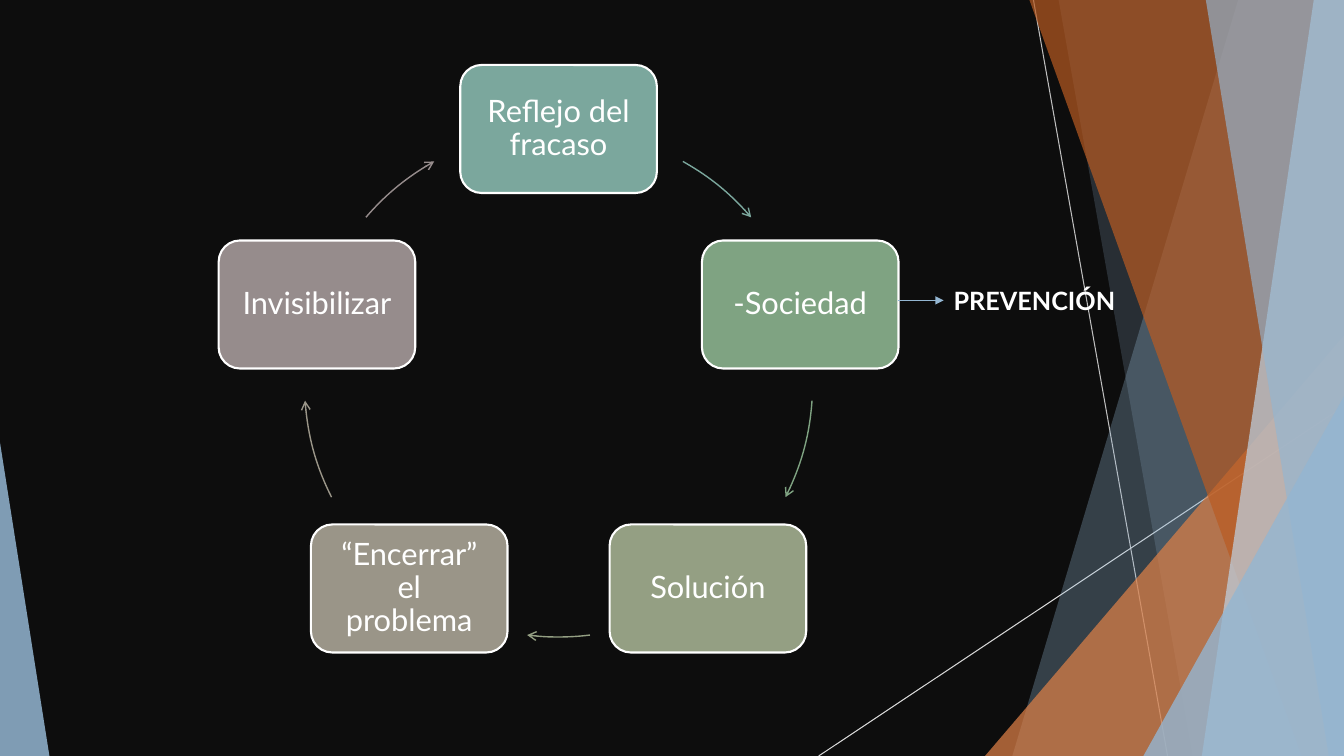
from lxml import etree
from pptx import Presentation
from pptx.dml.color import RGBColor
from pptx.enum.shapes import MSO_CONNECTOR, MSO_SHAPE
from pptx.enum.text import MSO_ANCHOR, MSO_AUTO_SIZE, PP_ALIGN
from pptx.oxml.ns import qn
from pptx.util import Inches, Pt
from math import cos, radians, sin

ARC, ROUNDED, TRIANGLE = MSO_SHAPE.ARC, MSO_SHAPE.ROUNDED_RECTANGLE, MSO_SHAPE.ISOSCELES_TRIANGLE
STRAIGHT = MSO_CONNECTOR.STRAIGHT
MIDDLE = MSO_ANCHOR.MIDDLE
CENTER, LEFT = PP_ALIGN.CENTER, PP_ALIGN.LEFT
GROW = MSO_AUTO_SIZE.SHAPE_TO_FIT_TEXT

BLACK = RGBColor(0x0D, 0x0D, 0x0D)
WHITE = RGBColor(0xFF, 0xFF, 0xFF)
BLUE = RGBColor(0x94, 0xB6, 0xD2)
PALE_BLUE = RGBColor(0xBF, 0xD3, 0xE4)
ORANGE = RGBColor(0xDD, 0x80, 0x47)
BROWN = RGBColor(0xB9, 0x5B, 0x22)
GREY = RGBColor(0xBF, 0xBF, 0xBF)
LIGHT_GREY = RGBColor(0xD9, 0xD9, 0xD9)
TEAL = RGBColor(0x7B, 0xA7, 0x9D)
GREEN = RGBColor(0x7F, 0xA3, 0x82)
OLIVE = RGBColor(0x94, 0x9F, 0x83)
TAUPE = RGBColor(0x9A, 0x95, 0x88)
MAUVE = RGBColor(0x96, 0x8C, 0x8C)

FONT = "Lato"
SLIDE_W, SLIDE_H = 13.33, 7.5
CYCLE_X, CYCLE_Y, RADIUS = 5.54, 3.8, 2.52
STEP_W, STEP_H = 1.95, 1.27

# Step label, colour, and start and end angle of the arrow that follows it
STEPS = [
    ("Reflejo del fracaso", TEAL, 299.3, 319.3),
    ("-Sociedad", GREEN, 4, 26.7),
    ("Solución", OLIVE, 82.9, 97.1),
    ("“Encerrar” el problema", TAUPE, 153.3, 176),
    ("Invisibilizar", MAUVE, 220.7, 240.7),
]


def write_text(shape, text, size, bold=False, align=LEFT, spacing=1.0):
    frame = shape.text_frame
    frame.word_wrap = True
    paragraph = frame.paragraphs[0]
    paragraph.alignment = align
    paragraph.line_spacing = spacing
    run = paragraph.add_run()
    run.text = text
    run.font.name = FONT
    run.font.size = Pt(size)
    run.font.bold = bold
    run.font.color.rgb = WHITE
    return frame


def set_line(shape, color, width, arrowhead=None):
    shape.line.color.rgb = color
    shape.line.width = Pt(width)
    if arrowhead:
        outline = shape._element.spPr.find(qn("a:ln"))
        etree.SubElement(outline, qn("a:tailEnd"), type=arrowhead)


def add_line(slide, start, end, color, width, arrowhead=None):
    line = slide.shapes.add_connector(STRAIGHT, *map(Inches, start + end))
    set_line(line, color, width, arrowhead)
    etree.SubElement(line._element.spPr, qn("a:effectLst"))
    return line


def fill_facet(facet, color, opacity):
    """Give a background facet a see-through fill; opacity is in percent."""
    facet.shadow.inherit = False
    facet.line.fill.background()
    facet.fill.solid()
    facet.fill.fore_color.rgb = color
    tint = facet._element.spPr.find(qn("a:solidFill"))[0]
    etree.SubElement(tint, qn("a:alpha"), val=str(opacity * 1000))


def add_band(slide, top_x, bottom_x, color, opacity):
    """Add a full-height facet from a slanted left edge to the slide's right side."""
    builder = slide.shapes.build_freeform(Inches(top_x), 0)
    corners = [(SLIDE_W, 0), (SLIDE_W, SLIDE_H), (bottom_x, SLIDE_H)]
    builder.add_line_segments([(Inches(x), Inches(y)) for x, y in corners])
    fill_facet(builder.convert_to_shape(), color, opacity)


def add_corner(slide, left, top, width, apex, color, opacity):
    """Add a right triangle standing on the slide's bottom edge."""
    corner = slide.shapes.add_shape(
        TRIANGLE, Inches(left), Inches(top), Inches(width), Inches(SLIDE_H - top))
    corner.adjustments[0] = apex
    fill_facet(corner, color, opacity)


def add_backdrop(slide):
    slide.background.fill.solid()
    slide.background.fill.fore_color.rgb = BLACK
    add_line(slide, (10.25, 0), (11.58, SLIDE_H), GREY, 0.75)
    add_line(slide, (SLIDE_W, 4.03), (8.12, SLIDE_H), LIGHT_GREY, 0.75)
    add_band(slide, 12.28, 10.04, BLUE, 30)
    add_band(slide, 10.5, 11.83, BLUE, 20)
    add_corner(slide, 9.77, 3.33, 3.56, 1, ORANGE, 72)
    add_band(slide, 10.21, 12.91, BROWN, 70)
    add_band(slide, 13.03, 11.92, PALE_BLUE, 70)
    add_band(slide, 11.96, 13.18, BLUE, 65)
    add_corner(slide, 11.34, 3.93, 1.99, 1, BLUE, 80)
    add_corner(slide, 0, 4.39, 0.49, 0, BLUE, 85)


def add_step(slide, angle, label, color):
    left = CYCLE_X + RADIUS * cos(radians(angle)) - STEP_W / 2
    top = CYCLE_Y + RADIUS * sin(radians(angle)) - STEP_H / 2
    step = slide.shapes.add_shape(
        ROUNDED, Inches(left), Inches(top), Inches(STEP_W), Inches(STEP_H))
    step.shadow.inherit = False
    step.fill.solid()
    step.fill.fore_color.rgb = color
    set_line(step, WHITE, 1.5)
    frame = write_text(step, label, 22, align=CENTER, spacing=0.9)
    frame.vertical_anchor = MIDDLE
    frame.margin_left = frame.margin_right = Inches(0.15)
    frame.margin_top = frame.margin_bottom = Inches(0.15)


def add_cycle_arrow(slide, start, end, color):
    arrow = slide.shapes.add_shape(
        ARC, Inches(CYCLE_X - RADIUS), Inches(CYCLE_Y - RADIUS),
        Inches(2 * RADIUS), Inches(2 * RADIUS))
    # Angles are stored in 60000ths of a degree, adjustments in 100000ths
    arrow.adjustments[0] = start * 0.6
    arrow.adjustments[1] = end * 0.6
    arrow.shadow.inherit = False
    arrow.fill.background()
    set_line(arrow, color, 1, "arrow")


def add_prevention(slide):
    prevention = slide.shapes.add_textbox(
        Inches(9.36), Inches(2.78), Inches(1.82), Inches(0.4))
    write_text(prevention, "PREVENCIÓN", 18, bold=True).auto_size = GROW
    pointer = add_line(slide, (8.91, 2.98), (9.36, 2.98), BLUE, 1, "triangle")
    pointer.end_connect(prevention, 1)


def main():
    prs = Presentation()
    prs.slide_width, prs.slide_height = Inches(SLIDE_W), Inches(SLIDE_H)
    slide = prs.slides.add_slide(prs.slide_layouts[6])
    add_backdrop(slide)
    for index, (label, color, start, end) in enumerate(STEPS):
        add_step(slide, -90 + index * 360 / len(STEPS), label, color)
        add_cycle_arrow(slide, start, end, color)
    add_prevention(slide)
    prs.save("out.pptx")


if __name__ == "__main__":
    main()
